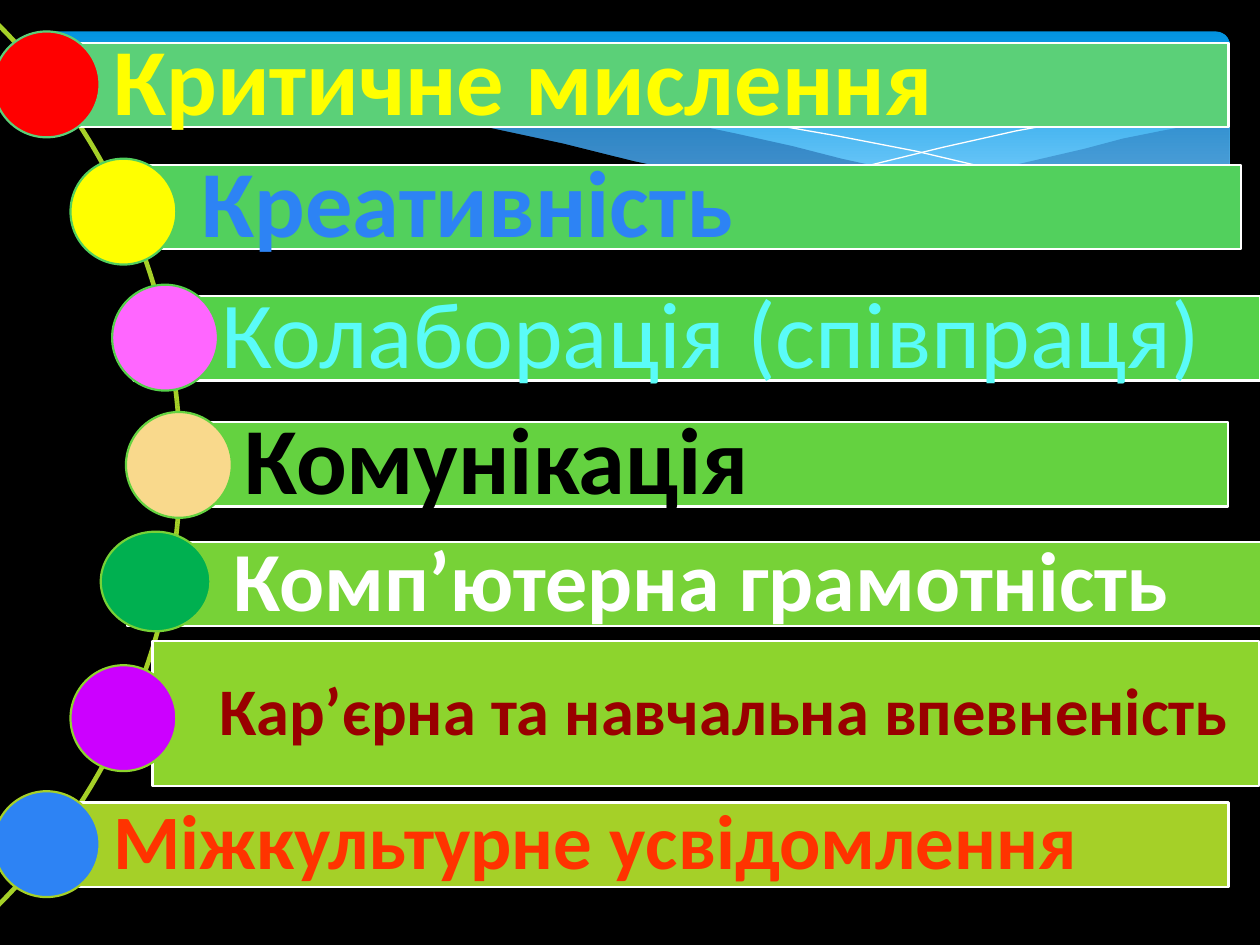
"""Build a slide listing seven key skills along an arc."""
from lxml.etree import SubElement
from pptx import Presentation
from pptx.dml.color import RGBColor
from pptx.enum.shapes import MSO_SHAPE
from pptx.enum.text import MSO_ANCHOR, PP_ALIGN
from pptx.oxml.ns import qn
from pptx.util import Inches, Pt

BLACK = RGBColor(0, 0, 0)
WHITE = RGBColor(255, 255, 255)
NAVY = RGBColor(0x07, 0x3E, 0x87)
SKY = RGBColor(0x02, 0x93, 0xE0)
PALE = RGBColor(0x83, 0xD3, 0xFE)
LIME = RGBColor(0xA5, 0xD0, 0x28)
MINT = RGBColor(0x5B, 0xD0, 0x78)
JADE = RGBColor(0x52, 0xD0, 0x5D)
GREEN = RGBColor(0x54, 0xD1, 0x49)
LEAF = RGBColor(0x64, 0xD2, 0x40)
GRASS = RGBColor(0x77, 0xD2, 0x37)
MOSS = RGBColor(0x8D, 0xD4, 0x2D)
RED = RGBColor(255, 0, 0)
YELLOW = RGBColor(255, 255, 0)
PINK = RGBColor(0xFF, 0x66, 0xFF)
SAND = RGBColor(0xF9, 0xD9, 0x8C)
FERN = RGBColor(0x00, 0xB0, 0x50)
PURPLE = RGBColor(0xCC, 0x00, 0xFF)
BLUE = RGBColor(0x2D, 0x83, 0xF4)
AQUA = RGBColor(0x5A, 0xFB, 0xF8)
WINE = RGBColor(0x99, 0, 0)
ORANGE = RGBColor(0xFF, 0x33, 0)

WAVES = [
    ([(9.76, 0.94), (9.48, 0.99), (9.21, 1.04), (8.91, 1.1), (8.61, 1.18),
      (8.05, 1.31), (7.53, 1.43), (7.06, 1.52), (6.61, 1.6), (7.05, 1.65),
      (7.45, 1.69), (7.92, 1.72), (8.35, 1.72), (8.72, 1.69), (9.05, 1.63),
      (9.35, 1.56), (9.63, 1.47), (9.76, 1.41)], NAVY, 29),
    ([(8.93, 1.67), (8.66, 1.64), (8.07, 1.54), (7.41, 1.42), (6.68, 1.26),
      (6.29, 1.16), (5.84, 1.06), (5.41, 0.97), (5.02, 0.9), (4.65, 0.86),
      (4.2, 0.82), (3.8, 0.8), (3.44, 0.8), (3.13, 0.82), (2.86, 0.86),
      (3.23, 0.9), (3.62, 0.97), (4.04, 1.06), (4.49, 1.16), (5.3, 1.35),
      (6.01, 1.5), (6.5, 1.58), (6.95, 1.65), (7.36, 1.69), (7.73, 1.72),
      (8.18, 1.73), (8.57, 1.71)], NAVY, 40),
    ([(3.09, 0.9), (3.28, 0.86), (3.63, 0.83), (4.16, 0.81), (4.69, 0.83),
      (5.1, 0.86), (5.56, 0.91), (6.08, 0.98), (6.65, 1.08), (7.27, 1.2),
      (7.95, 1.36), (8.69, 1.55), (9.07, 1.66)], None, 0),
    ([(6.13, 1.51), (6.53, 1.41), (6.95, 1.3), (7.48, 1.17), (8.06, 1.04),
      (8.66, 0.93), (8.95, 0.88), (9.24, 0.84), (9.51, 0.82), (9.75, 0.8)],
     None, 0),
    ([(9.77, 1.41), (9.5, 1.51), (9.2, 1.59), (8.87, 1.66), (8.5, 1.7),
      (8.09, 1.71), (7.61, 1.7), (7.08, 1.65), (6.48, 1.56), (5.79, 1.44),
      (5.03, 1.28), (4.47, 1.14), (3.91, 1.02), (3.4, 0.92), (2.92, 0.85),
      (2.5, 0.81), (2.11, 0.78), (1.77, 0.78), (1.46, 0.79), (1.19, 0.82),
      (0.95, 0.85), (0.76, 0.89), (0.59, 0.93), (0.46, 0.98), (0.36, 1.02),
      (0.23, 1.07), (0.23, 2.24), (9.77, 2.24)], BLACK, 100),
]

SKILLS = [
    ("Критичне мислення", 54, True, YELLOW, MINT, RED,
     (0.37, 0.34, 9.38, 0.67), (-0.05, 0.25, 0.84, 0.84), 0.53, 0.15),
    ("Креативність", 54, True, BLUE, JADE, YELLOW,
     (1.07, 1.31, 8.78, 0.67), (0.56, 1.26, 0.84, 0.84), 0.53, 0.15),
    ("Колаборація (співпраця)", 54, False, AQUA, GREEN, PINK,
     (1.06, 2.35, 8.94, 0.67), (0.89, 2.26, 0.84, 0.84), 0.7, 0.15),
    ("Комунікація", 54, True, BLACK, LEAF, SAND,
     (1.41, 3.35, 8.34, 0.67), (1, 3.27, 0.84, 0.84), 0.53, 0.15),
    ("Комп’ютерна грамотність", 48, True, WHITE, GRASS, FERN,
     (1.01, 4.3, 9.04, 0.67), (0.8, 4.22, 0.87, 0.79), 0.84, 0.14),
    ("Кар’єрна та навчальна впевненість", 38, True, WINE, MOSS, PURPLE,
     (1.21, 5.09, 8.78, 1.15), (0.56, 5.28, 0.84, 0.84), 0.53, 0.11),
    ("Міжкультурне усвідомлення", 44, True, ORANGE, LIME, BLUE,
     (0.37, 6.37, 9.38, 0.67), (-0.05, 6.28, 0.84, 0.84), 0.53, 0.12),
]


def paint(shape, fill, line, width=1.25):
    shape.shadow.inherit = False
    if fill is None:
        shape.fill.background()
    else:
        shape.fill.solid()
        shape.fill.fore_color.rgb = fill
    if line is None:
        shape.line.fill.background()
    else:
        shape.line.color.rgb = line
        shape.line.width = Pt(width)


def place(kind, box, fill, line):
    shape = slide.shapes.add_shape(kind, *[Inches(n) for n in box])
    paint(shape, fill, line)
    return shape


deck = Presentation()
deck.slide_width = Inches(10)
deck.slide_height = Inches(7.5)
slide = deck.slides.add_slide(deck.slide_layouts[6])
slide.background.fill.solid()
slide.background.fill.fore_color.rgb = BLACK

panel = place(MSO_SHAPE.ROUNDED_RECTANGLE, (0.25, 0.25, 9.51, 1.56), SKY, None)
panel.adjustments[0] = 0.07
panel.fill.gradient()
panel.fill.gradient_angle = 270
for stop, color, spot in zip(panel.fill.gradient_stops, (SKY, PALE), (0, 0.9)):
    stop.color.rgb = color
    stop.position = spot

for points, fill, alpha in WAVES:
    dots = [(x * 100, y * 100) for x, y in points]
    pen = slide.shapes.build_freeform(*dots[0], scale=Inches(0.01))
    pen.add_line_segments(dots[1:], close=fill is not None)
    wave = pen.convert_to_shape()
    paint(wave, fill, WHITE if fill is None else None, 0)
    if 0 < alpha < 100:
        tint = wave.fill._xPr.find(qn("a:solidFill"))[0]
        SubElement(tint, qn("a:alpha"), val=str(alpha * 1000))

arc = place(MSO_SHAPE.BLOCK_ARC, (-8.48, -1.27, 9.92, 9.92), None, LIME)
for i, value in enumerate((189, 27, 0.002)):
    arc.adjustments[i] = value

for text, size, bold, ink, fill, dot, box, ring, left, pad in SKILLS:
    bar = place(MSO_SHAPE.RECTANGLE, box, fill, WHITE)
    frame = bar.text_frame
    frame.word_wrap = True
    frame.vertical_anchor = MSO_ANCHOR.MIDDLE
    frame.margin_left = Inches(left)
    frame.margin_right = frame.margin_top = frame.margin_bottom = Inches(pad)
    line = frame.paragraphs[0]
    line.text = text
    line.alignment = PP_ALIGN.LEFT
    line.line_spacing = 0.9
    line.font.name = "Calibri"
    line.font.size = Pt(size)
    line.font.bold = bold
    line.font.color.rgb = ink
    place(MSO_SHAPE.OVAL, ring, dot, fill)

deck.save("out.pptx")
